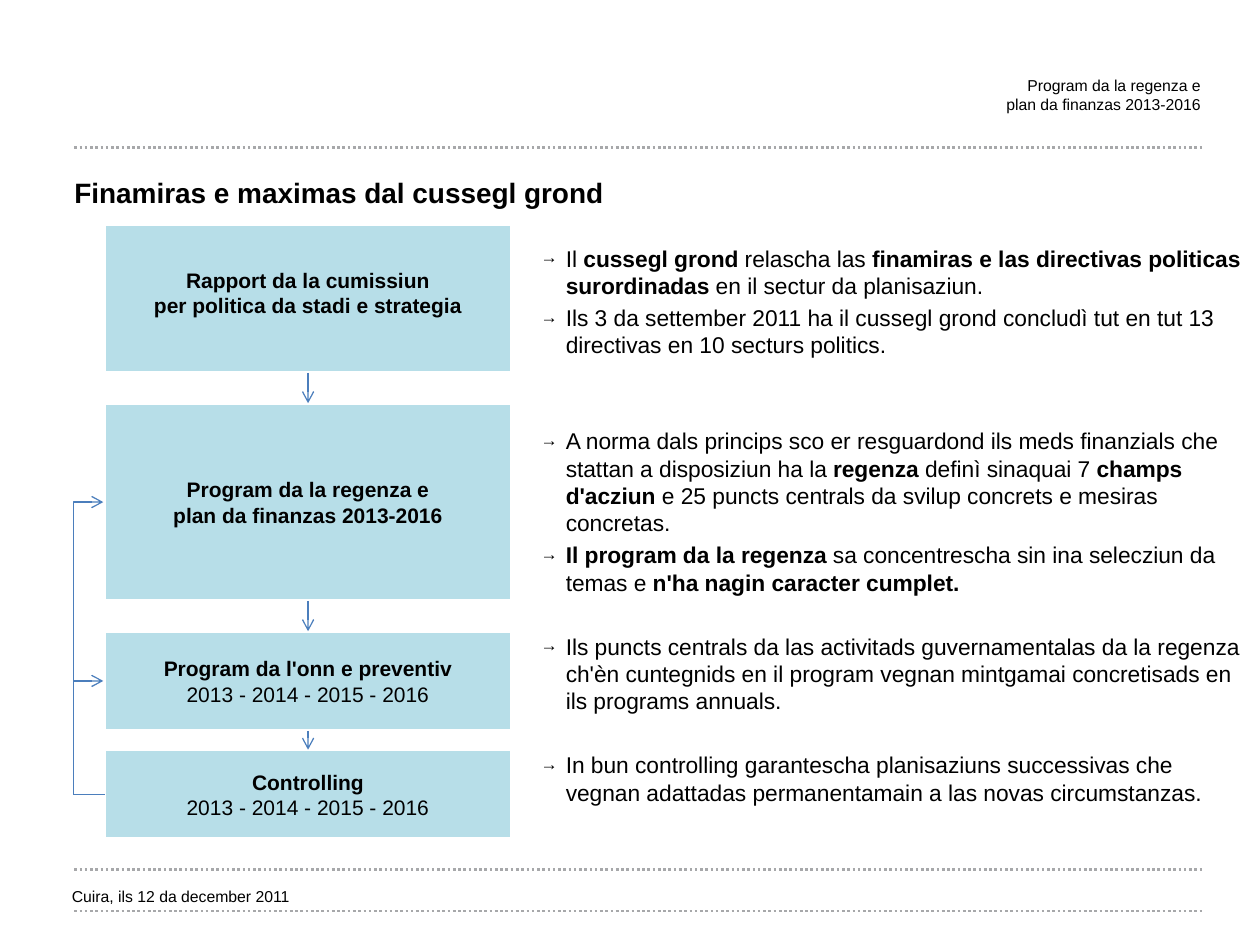
"""Build the slide on aims and guidelines of the grand council."""
from dataclasses import dataclass

from lxml import etree
from pptx import Presentation
from pptx.dml.color import RGBColor
from pptx.enum.dml import MSO_LINE
from pptx.enum.shapes import MSO_CONNECTOR, MSO_SHAPE
from pptx.enum.text import MSO_ANCHOR, MSO_AUTO_SIZE, PP_ALIGN
from pptx.oxml.ns import qn
from pptx.util import Inches, Pt

LEFT, RIGHT, CENTER = PP_ALIGN.LEFT, PP_ALIGN.RIGHT, PP_ALIGN.CENTER
TOP, MIDDLE = MSO_ANCHOR.TOP, MSO_ANCHOR.MIDDLE
STRAIGHT, ELBOW = MSO_CONNECTOR.STRAIGHT, MSO_CONNECTOR.ELBOW
DOTTED = MSO_LINE.ROUND_DOT
NO_AUTOFIT = MSO_AUTO_SIZE.NONE
RECTANGLE = MSO_SHAPE.RECTANGLE

BLACK, WHITE, GREY, BLUE, PALE_BLUE = "000000", "FFFFFF", "A7A8AA", "4B7EBC", "B7DEE8"
STEP_LEFT, STEP_WIDTH = 0.83, 3.23
LOOP_REACH, LOOP_WIDTH = 0.25, 0.01


@dataclass(frozen=True)
class Step:
    """A planning step; text between double asterisks is bold."""
    top: float
    height: float
    lines: tuple[str, ...]
    bottom_inset: float = 0.05

    @property
    def bottom(self) -> float:
        return self.top + self.height

    @property
    def middle(self) -> float:
        return self.top + self.height / 2


@dataclass(frozen=True)
class Remark:
    """A bulleted remark with the points of space before it."""
    text: str
    space_before: float


YEARS = "2013 - 2014 - 2015 - 2016"
STEPS = (
    Step(1.78, 1.18, ("**Rapport da la cumissiun**", "**per politica da stadi e strategia**"), 0.15),
    Step(3.2, 1.57, ("**Program da la regenza e**", "**plan da finanzas 2013-2016**")),
    Step(5.01, 0.79, ("**Program da l'onn e preventiv**", YEARS)),
    Step(5.95, 0.71, ("**Controlling**", YEARS)),
)
REMARKS = (
    Remark("Il **cussegl grond** relascha las **finamiras e las directivas politicas "
           "surordinadas** en il sectur da planisaziun.", 0),
    Remark("Ils 3 da settember 2011 ha il cussegl grond concludì tut en tut 13 "
           "directivas en 10 secturs politics.", 2.6),
    Remark("A norma dals princips sco er resguardond ils meds finanzials che stattan a "
           "disposiziun ha la **regenza **definì sinaquai 7 **champs d'acziun** e 25 "
           "puncts centrals da svilup concrets e mesiras concretas.", 39.3),
    Remark("**Il program da la regenza **sa concentrescha sin ina selecziun da temas e "
           "**n'ha nagin caracter cumplet.**", 2.6),
    Remark("Ils puncts centrals da las activitads guvernamentalas da la regenza ch'èn "
           "cuntegnids en il program vegnan mintgamai concretisads en ils programs annuals.", 21),
    Remark("In bun controlling garantescha planisaziuns successivas che vegnan adattadas "
           "permanentamain a las novas circumstanzas.", 21),
)


def color(value: str) -> RGBColor:
    return RGBColor.from_string(value)


def apply(target, values: dict) -> None:
    for name, value in values.items():
        setattr(target, name, value)


def place(shape, left: float, top: float, width: float, height: float) -> None:
    apply(shape, {"left": Inches(left), "top": Inches(top),
                  "width": Inches(width), "height": Inches(height)})


def format_frame(frame, anchor=TOP, inset: float = 0) -> None:
    margin = Inches(inset)
    apply(frame, {"word_wrap": True, "auto_size": NO_AUTOFIT, "vertical_anchor": anchor,
                  "margin_left": margin, "margin_right": margin,
                  "margin_top": margin, "margin_bottom": margin})


def write(paragraph, text: str, size: float, align=LEFT) -> None:
    paragraph.alignment = align
    for index, part in enumerate(text.split("**")):
        if part:
            run = paragraph.add_run()
            run.text = part
            apply(run.font, {"name": "Arial", "size": Pt(size), "bold": index % 2 == 1})
            run.font.color.rgb = color(BLACK)


def fill_frame(frame, lines: tuple[str, ...], size: float, align=LEFT) -> None:
    for index, text in enumerate(lines):
        paragraph = frame.add_paragraph() if index else frame.paragraphs[0]
        write(paragraph, text, size, align)


def add_text(slide, left: float, top: float, width: float, height: float):
    box = slide.shapes.add_textbox(Inches(left), Inches(top), Inches(width), Inches(height))
    format_frame(box.text_frame)
    return box.text_frame


def add_line(slide, start: tuple[float, float], end: tuple[float, float],
             line_color: str, width: float, kind=STRAIGHT):
    points = [Inches(value) for value in (*start, *end)]
    connector = slide.shapes.add_connector(kind, *points)
    connector.line.color.rgb = color(line_color)
    connector.line.width = Pt(width)
    etree.SubElement(connector.element.spPr, qn("a:effectLst"))
    return connector


def add_arrow(slide, start: tuple[float, float], end: tuple[float, float], kind=STRAIGHT):
    arrow = add_line(slide, start, end, BLUE, 0.75, kind)
    etree.SubElement(arrow.line._get_or_add_ln(), qn("a:tailEnd"), type="arrow")
    return arrow


def add_loop(slide, source: Step, target: Step) -> None:
    arrow = add_arrow(slide, (STEP_LEFT, source.middle),
                      (STEP_LEFT - LOOP_WIDTH, target.middle), ELBOW)
    adjustments = arrow.element.spPr.find(qn("a:prstGeom")).get_or_add_avLst()
    reach = round(LOOP_REACH / LOOP_WIDTH * 100000)
    etree.SubElement(adjustments, qn("a:gd"), name="adj1", fmla=f"val {reach}")


def add_step(slide, step: Step) -> None:
    box = slide.shapes.add_shape(RECTANGLE, Inches(STEP_LEFT), Inches(step.top),
                                 Inches(STEP_WIDTH), Inches(step.height))
    box.shadow.inherit = False
    box.fill.solid()
    box.fill.fore_color.rgb = color(PALE_BLUE)
    box.line.color.rgb = color(WHITE)
    box.line.width = Pt(2)
    format_frame(box.text_frame, MIDDLE, 0.05)
    box.text_frame.margin_bottom = Inches(step.bottom_inset)
    fill_frame(box.text_frame, step.lines, 12, CENTER)


def add_remarks(slide) -> None:
    frame = add_text(slide, 4.29, 1.94, 5.59, 4.8)
    for index, remark in enumerate(REMARKS):
        paragraph = frame.add_paragraph() if index else frame.paragraphs[0]
        properties = paragraph._p.get_or_add_pPr()
        properties.set("marL", str(Inches(0.2)))
        properties.set("indent", str(-Inches(0.2)))
        etree.SubElement(properties, qn("a:buSzPct"), val="75000")
        etree.SubElement(properties, qn("a:buFont"), typeface="Arial")
        etree.SubElement(properties, qn("a:buChar"), char="→")
        paragraph.space_before = Pt(remark.space_before)
        write(paragraph, remark.text, 13)


def main() -> None:
    deck = Presentation()
    apply(deck, {"slide_width": Inches(10), "slide_height": Inches(7.5)})
    slide = deck.slides.add_slide(deck.slide_layouts[5])

    for y in (1.17, 6.9, 7.23):
        add_line(slide, (0.59, y), (9.54, y), GREY, 1.5).line.dash_style = DOTTED

    title = slide.shapes.title
    place(title, 0.59, 1.39, 8.95, 0.33)
    format_frame(title.text_frame)
    fill_frame(title.text_frame, ("**Finamiras e maximas dal cussegl grond**",), 16)

    header = add_text(slide, 5, 0.6, 4.53, 0.44)
    fill_frame(header, ("Program da la regenza e", "plan da finanzas 2013-2016"), 9, RIGHT)
    footer = add_text(slide, 0.57, 6.96, 1.84, 0.24)
    fill_frame(footer, ("Cuira, ils 12 da december 2011",), 9)
    footer.paragraphs[0].line_spacing = 1.5

    add_remarks(slide)
    for step in STEPS:
        add_step(slide, step)
    center = STEP_LEFT + STEP_WIDTH / 2
    for upper, lower in zip(STEPS, STEPS[1:]):
        add_arrow(slide, (center, upper.bottom), (center, lower.top))
    for target in (STEPS[2], STEPS[1]):
        add_loop(slide, STEPS[3], target)

    deck.save("out.pptx")


if __name__ == "__main__":
    main()
